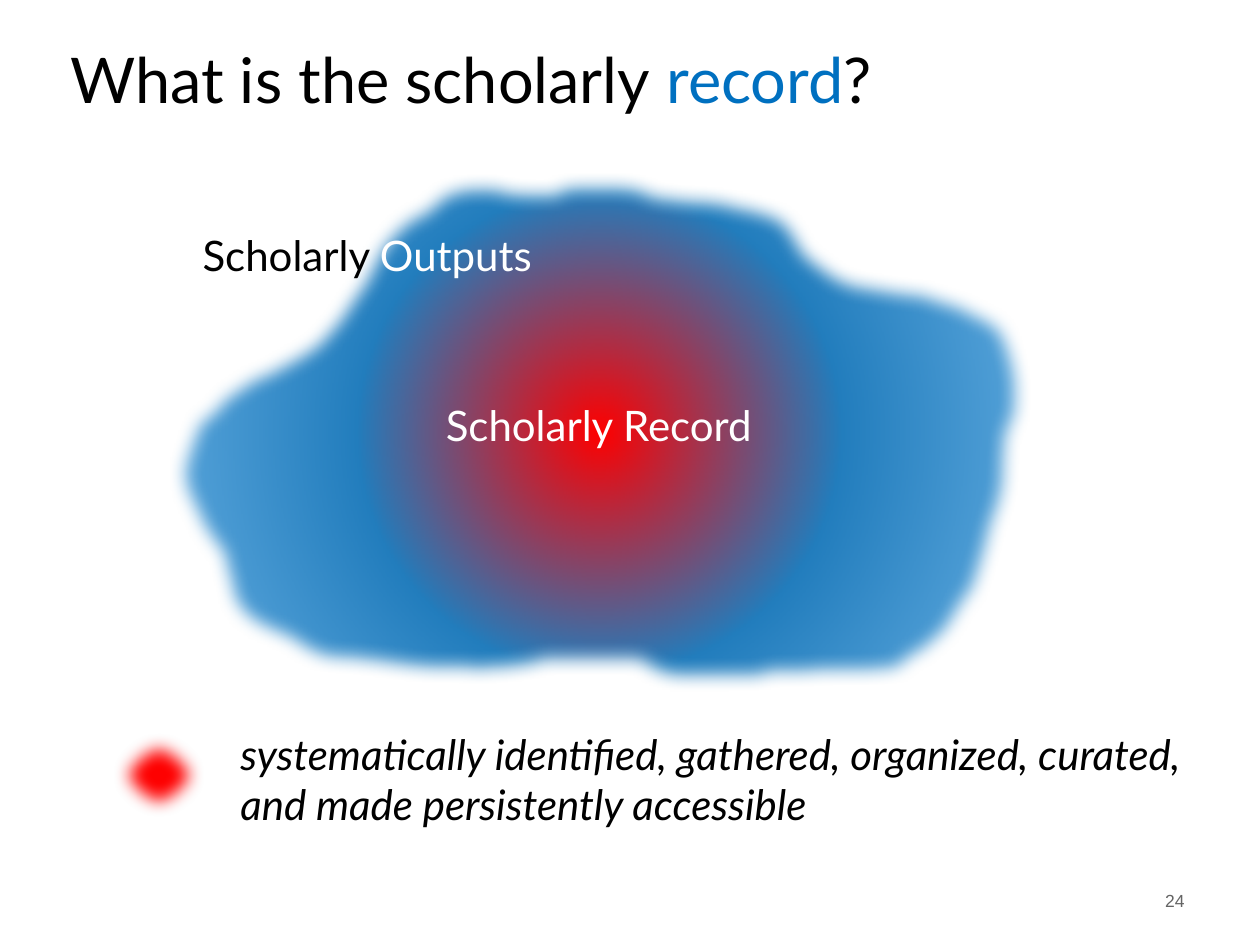
from typing import NamedTuple

import pptx
import pptx.dml.color
import pptx.enum.shapes
import pptx.enum.text
import pptx.oxml
import pptx.oxml.ns
import pptx.util

EMU_PER_PX = 9144  # 100 px to the inch
SOFT_EDGE = 127000
BLACK, WHITE, BLUE, RED, GREY = "000000", "FFFFFF", "0070C0", "FF0000", "646464"
ALIGN = pptx.enum.text.PP_ALIGN
ANCHOR = pptx.enum.text.MSO_ANCHOR

CLOUD_STOPS = [(0, RED), (48, "227DBD"), (100, "69B1E4")]
CLOUD_OUTLINE = [
    (435, 143), (425, 139), (419, 138), (356, 139), (342, 143), (335, 149),
    (326, 157), (315, 162), (304, 171), (293, 183), (284, 200), (278, 212),
    (267, 228), (257, 243), (242, 260), (231, 268), (217, 276), (202, 284),
    (190, 289), (179, 296), (167, 304), (158, 315), (147, 323), (140, 341),
    (134, 361), (133, 373), (136, 400), (145, 419), (150, 430), (159, 443),
    (166, 452), (169, 467), (171, 471), (174, 487), (182, 499), (193, 507),
    (206, 513), (218, 518), (232, 527), (245, 533), (256, 534), (273, 535),
    (297, 538), (318, 541), (390, 543), (418, 541), (439, 538), (444, 535),
    (494, 535), (509, 544), (522, 548), (536, 549), (616, 548), (624, 545),
    (720, 543), (726, 541), (736, 532), (745, 528), (755, 519), (762, 513),
    (769, 502), (777, 489), (784, 480), (790, 462), (794, 449), (799, 429),
    (804, 415), (808, 401), (810, 361), (815, 348), (819, 338), (818, 287),
    (815, 273), (810, 258), (805, 249), (799, 244), (788, 239), (775, 232),
    (759, 227), (743, 222), (731, 221), (711, 218), (692, 215), (678, 210),
    (665, 201), (651, 190), (644, 178), (638, 168), (629, 161), (613, 156),
    (594, 152), (582, 149), (560, 148), (533, 145), (522, 140), (507, 137),
    (438, 138), (431, 140), (396, 140),
]


class Span(NamedTuple):
    text: str
    color: str


class Label(NamedTuple):
    left: int
    top: int
    width: int
    height: int
    spans: list[Span]
    size: int
    font: str = "Lato"
    italic: bool = False
    wrap: bool = True
    align: ALIGN = ALIGN.LEFT
    anchor: ANCHOR = ANCHOR.TOP


LABELS = [
    Label(46, 27, 900, 70,
          [Span("What is the scholarly", BLACK), Span(" record", BLUE), Span("?", BLACK)],
          36, anchor=ANCHOR.MIDDLE),
    Label(717, 695, 233, 40, [Span("24", GREY)], 10, "Arial",
          align=ALIGN.RIGHT, anchor=ANCHOR.MIDDLE),
    Label(181, 573, 773, 91,
          [Span("systematically identified, gathered, organized, curated, "
                "and made persistently accessible", BLACK)],
          24, italic=True),
    Label(151, 177, 284, 50, [Span("Scholarly ", BLACK), Span("Outputs", WHITE)], 24, wrap=False),
    Label(344, 312, 267, 50, [Span("Scholarly Record", WHITE)], 24, wrap=False),
]


def px(length: int) -> int:
    return pptx.util.Emu(length * EMU_PER_PX)


def rgb(color: str) -> pptx.dml.color.RGBColor:
    return pptx.dml.color.RGBColor.from_string(color)


def soften(shape) -> None:
    """Remove the outline and shadow and blur the edge."""
    shape.line.fill.background()
    shape.shadow.inherit = False
    effects = shape._element.spPr.find(pptx.oxml.ns.qn("a:effectLst"))
    effects.append(pptx.oxml.parse_xml(
        f'<a:softEdge {pptx.oxml.ns.nsdecls("a")} rad="{SOFT_EDGE}"/>'))


def fill_radially(shape, stops: list[tuple[int, str]]) -> None:
    shape.fill.gradient()
    stop_xml = "".join(
        f'<a:gs pos="{percent * 1000}"><a:srgbClr val="{color}"/></a:gs>'
        for percent, color in stops)
    gradient = pptx.oxml.parse_xml(
        f'<a:gradFill {pptx.oxml.ns.nsdecls("a")} rotWithShape="1">'
        f'<a:gsLst>{stop_xml}</a:gsLst><a:path path="circle">'
        '<a:fillToRect l="50000" t="50000" r="50000" b="50000"/></a:path></a:gradFill>')
    properties = shape._element.spPr
    properties.replace(properties.find(pptx.oxml.ns.qn("a:gradFill")), gradient)


def draw_cloud(page) -> None:
    start, *others = CLOUD_OUTLINE
    builder = page.shapes.build_freeform(*start, scale=EMU_PER_PX)
    builder.add_line_segments(others, close=True)
    cloud = builder.convert_to_shape()
    fill_radially(cloud, CLOUD_STOPS)
    soften(cloud)


def draw_key(page) -> None:
    key = page.shapes.add_shape(
        pptx.enum.shapes.MSO_SHAPE.OVAL, px(85), px(578), px(82), px(74))
    key.fill.solid()
    key.fill.fore_color.rgb = rgb(RED)
    soften(key)


def draw_label(page, label: Label) -> None:
    box = page.shapes.add_textbox(
        px(label.left), px(label.top), px(label.width), px(label.height))
    frame = box.text_frame
    frame.word_wrap = label.wrap
    frame.vertical_anchor = label.anchor
    para = frame.paragraphs[0]
    para.alignment = label.align
    for span in label.spans:
        run = para.add_run()
        run.text = span.text
        run.font.name = label.font
        run.font.size = pptx.util.Pt(label.size)
        run.font.italic = label.italic
        run.font.color.rgb = rgb(span.color)


def main() -> None:
    deck = pptx.Presentation()
    deck.slide_width, deck.slide_height = px(1000), px(750)
    page = deck.slides.add_slide(deck.slide_layouts[6])
    draw_cloud(page)
    draw_key(page)
    for label in LABELS:
        draw_label(page, label)
    deck.save("out.pptx")


if __name__ == "__main__":
    main()
